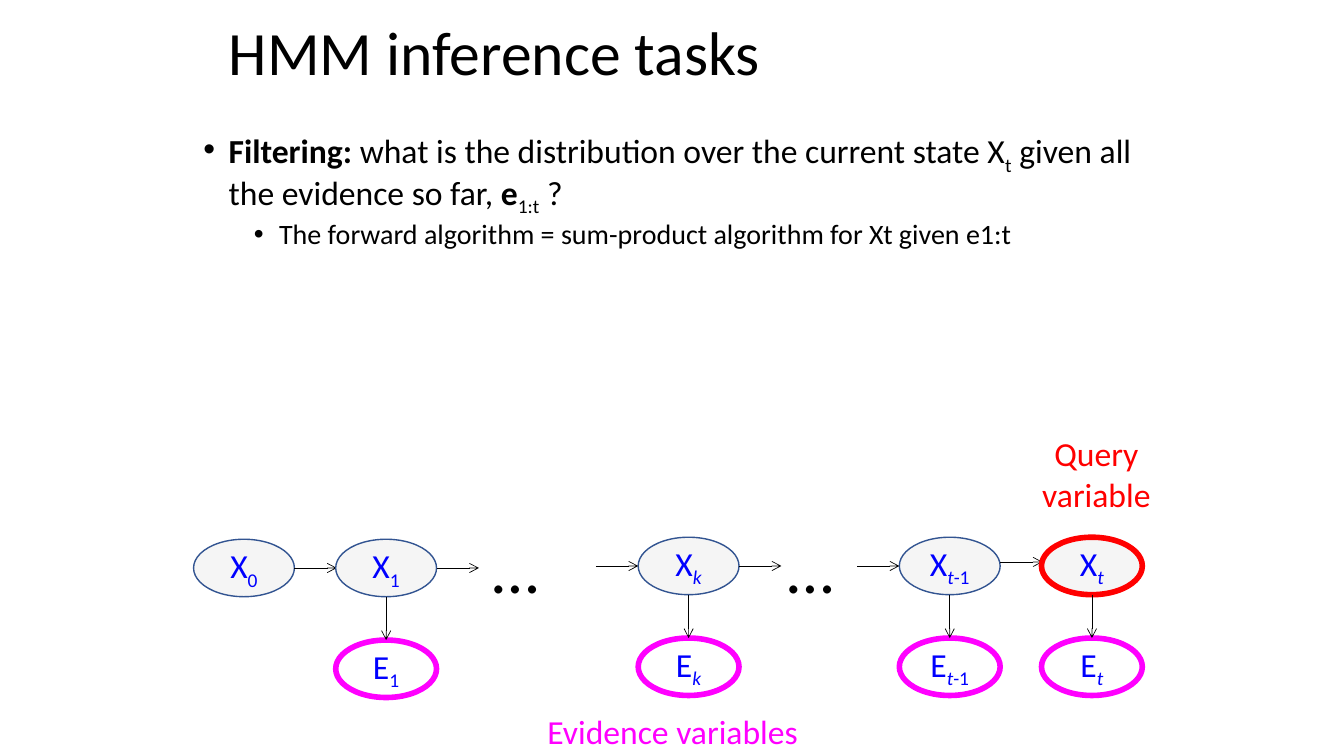
from dataclasses import dataclass

from lxml import etree
from pptx import Presentation
from pptx.dml.color import RGBColor
from pptx.enum.shapes import MSO_CONNECTOR, MSO_SHAPE
from pptx.enum.text import MSO_ANCHOR, MSO_AUTO_SIZE, PP_ALIGN
from pptx.oxml.ns import qn
from pptx.util import Emu, Inches, Pt

STRAIGHT = MSO_CONNECTOR.STRAIGHT
OVAL = MSO_SHAPE.OVAL
MIDDLE = MSO_ANCHOR.MIDDLE
LEFT, CENTER = PP_ALIGN.LEFT, PP_ALIGN.CENTER
GROW, NO_FIT = MSO_AUTO_SIZE.SHAPE_TO_FIT_TEXT, MSO_AUTO_SIZE.NONE


@dataclass(frozen=True)
class Theme:
    font: str = "Calibri"
    ink: str = "000000"
    symbol: str = "0000FF"
    state_fill: str = "F5F5F5"
    state_line: str = "325491"
    query: str = "FF0000"
    evidence: str = "FF00FF"
    title_size: int = 44
    dots_size: int = 48
    text_size: int = 24
    detail_size: int = 20
    thin: float = 0.5
    normal: float = 1
    thick: float = 4


THEME = Theme()
SLIDE_WIDTH, SLIDE_HEIGHT = 13.33, 7.5
SUB = {"sub": True}
SUB_ITALIC = {"sub": True, "italic": True}
BOLD = {"bold": True}

NODE_WIDTH, NODE_HEIGHT = 1, 0.57
ARROW_LENGTH = 0.42
ROW_STEP = 1
# Offset from the chain's left edge, drop below its top, and subscript runs.
TIME_STEPS = [
    (0, 0.02, [("0", SUB)]),
    (1.41, 0.02, [("1", SUB)]),
    (4.41, 0, [("k", SUB_ITALIC)]),
    (7, 0, [("t", SUB_ITALIC), ("-1", SUB)]),
    (8.41, 0, [("t", SUB_ITALIC)]),
]
LAST = len(TIME_STEPS) - 1
STEPS_AFTER_GAP = (2, 3)
DOTS_OFFSETS = (2.87, 5.79)

FILTERING = [
    ("Filtering: ", BOLD),
    ("what is the distribution over the current state X", {}),
    ("t", SUB),
    (" given all the evidence so far, ", {}),
    ("e", BOLD),
    ("1:t", SUB),
    (" ?", {}),
]
FORWARD = [("The forward algorithm = sum-product algorithm for Xt given e1:t", {})]


def set_all(target, values):
    for name, value in values.items():
        setattr(target, name, value)


def write_runs(paragraph, runs, size, color):
    """Add (text, format) runs; the format key "sub" lowers the run."""
    for text, extra in runs:
        run = paragraph.add_run()
        run.text = text
        set_all(run.font, {
            "name": THEME.font,
            "size": Pt(size),
            "bold": extra.get("bold", False),
            "italic": extra.get("italic", False),
        })
        run.font.color.rgb = RGBColor.from_string(color)
        if extra.get("sub"):
            run._r.get_or_add_rPr().set("baseline", "-25000")


def set_bullet(paragraph, indent, level):
    properties = paragraph._p.get_or_add_pPr()
    properties.set("marL", str(Inches(indent)))
    properties.set("indent", str(Inches(-0.25)))
    properties.set("lvl", str(level))
    etree.SubElement(properties, qn("a:buFont")).set("typeface", "Arial")
    etree.SubElement(properties, qn("a:buChar")).set("char", "•")


def add_label(slide, box, text, size, color, align=LEFT, wrap=False):
    label = slide.shapes.add_textbox(*map(Inches, box))
    set_all(label.text_frame, {"word_wrap": wrap, "auto_size": GROW})
    paragraph = label.text_frame.paragraphs[0]
    paragraph.alignment = align
    write_runs(paragraph, [(text, {})], size, color)


def add_arrow(slide, start, end):
    arrow = slide.shapes.add_connector(STRAIGHT, *map(Inches, (*start, *end)))
    arrow.line.color.rgb = RGBColor.from_string(THEME.ink)
    arrow.line.width = Pt(THEME.thin)
    properties = arrow._element.spPr
    etree.SubElement(properties.find(qn("a:ln")), qn("a:tailEnd")).set("type", "arrow")
    etree.SubElement(properties, qn("a:effectLst"))


def add_node(slide, left, top, runs, line_color, line_width, fill=None):
    node = slide.shapes.add_shape(
        OVAL, *map(Inches, (left, top, NODE_WIDTH, NODE_HEIGHT)))
    node.shadow.inherit = False
    if fill:
        node.fill.solid()
        node.fill.fore_color.rgb = RGBColor.from_string(fill)
    else:
        node.fill.background()
    node.line.color.rgb = RGBColor.from_string(line_color)
    node.line.width = Pt(line_width)
    set_all(node.text_frame, {
        "word_wrap": True, "vertical_anchor": MIDDLE,
        "margin_left": Emu(0), "margin_right": Emu(0),
    })
    paragraph = node.text_frame.paragraphs[0]
    paragraph.alignment = CENTER
    write_runs(paragraph, runs, THEME.text_size, THEME.symbol)


def add_title(slide, box, text):
    title = slide.shapes.title
    set_all(title, dict(zip(("left", "top", "width", "height"), map(Inches, box))))
    set_all(title.text_frame, {"vertical_anchor": MIDDLE, "auto_size": NO_FIT})
    paragraph = title.text_frame.paragraphs[0]
    set_all(paragraph, {"alignment": LEFT, "line_spacing": 0.9})
    write_runs(paragraph, [(text, {})], THEME.title_size, THEME.ink)


def add_task(slide, box):
    frame = slide.shapes.add_textbox(*map(Inches, box)).text_frame
    frame.word_wrap = True
    lines = [(FILTERING, THEME.text_size, 0.25, 10), (FORWARD, THEME.detail_size, 0.75, 5)]
    for level, (runs, size, indent, space) in enumerate(lines):
        paragraph = frame.add_paragraph() if level else frame.paragraphs[0]
        set_all(paragraph, {"line_spacing": 0.9, "space_before": Pt(space)})
        set_bullet(paragraph, indent, level)
        write_runs(paragraph, runs, size, THEME.ink)


def add_chain(slide, left, top):
    """Draw the hidden states, their evidence, and the labels around them."""
    for step, (offset, drop, subscript) in enumerate(TIME_STEPS):
        x, y = left + offset, top + drop
        middle, center = y + NODE_HEIGHT / 2, x + NODE_WIDTH / 2
        is_query = step == LAST
        add_node(slide, x, y, [("X", {}), *subscript],
                 THEME.query if is_query else THEME.state_line,
                 THEME.thick if is_query else THEME.normal, THEME.state_fill)
        if step:
            add_node(slide, x, y + ROW_STEP, [("E", {}), *subscript],
                     THEME.evidence, THEME.thick)
            add_arrow(slide, (center, y + NODE_HEIGHT), (center, y + ROW_STEP))
        if not is_query:
            exit_x = x + NODE_WIDTH
            exit_y = middle - 0.04 if step == LAST - 1 else middle
            add_arrow(slide, (exit_x, exit_y), (exit_x + ARROW_LENGTH, exit_y))
        if step in STEPS_AFTER_GAP:
            add_arrow(slide, (x - ARROW_LENGTH, middle), (x, middle))

    for offset in DOTS_OFFSETS:
        add_label(slide, (left + offset, top - 0.16, 0.67, 0.91), "…",
                  THEME.dots_size, THEME.ink)
    add_label(slide, (left + 8.24, top - 1.08, 1.43, 0.91), "Query variable",
              THEME.text_size, THEME.query, CENTER, True)
    add_label(slide, (left + 3.41, top + 1.67, 2.72, 0.5), "Evidence variables",
              THEME.text_size, THEME.evidence)


def main():
    deck = Presentation()
    deck.slide_width, deck.slide_height = Inches(SLIDE_WIDTH), Inches(SLIDE_HEIGHT)
    slide = deck.slides.add_slide(deck.slide_layouts[5])
    add_title(slide, (2.17, 0.08, 9, 0.95), "HMM inference tasks")
    add_task(slide, (1.92, 1.25, 9.5, 5.45))
    add_chain(slide, 1.92, 5.33)
    deck.save("out.pptx")


if __name__ == "__main__":
    main()
